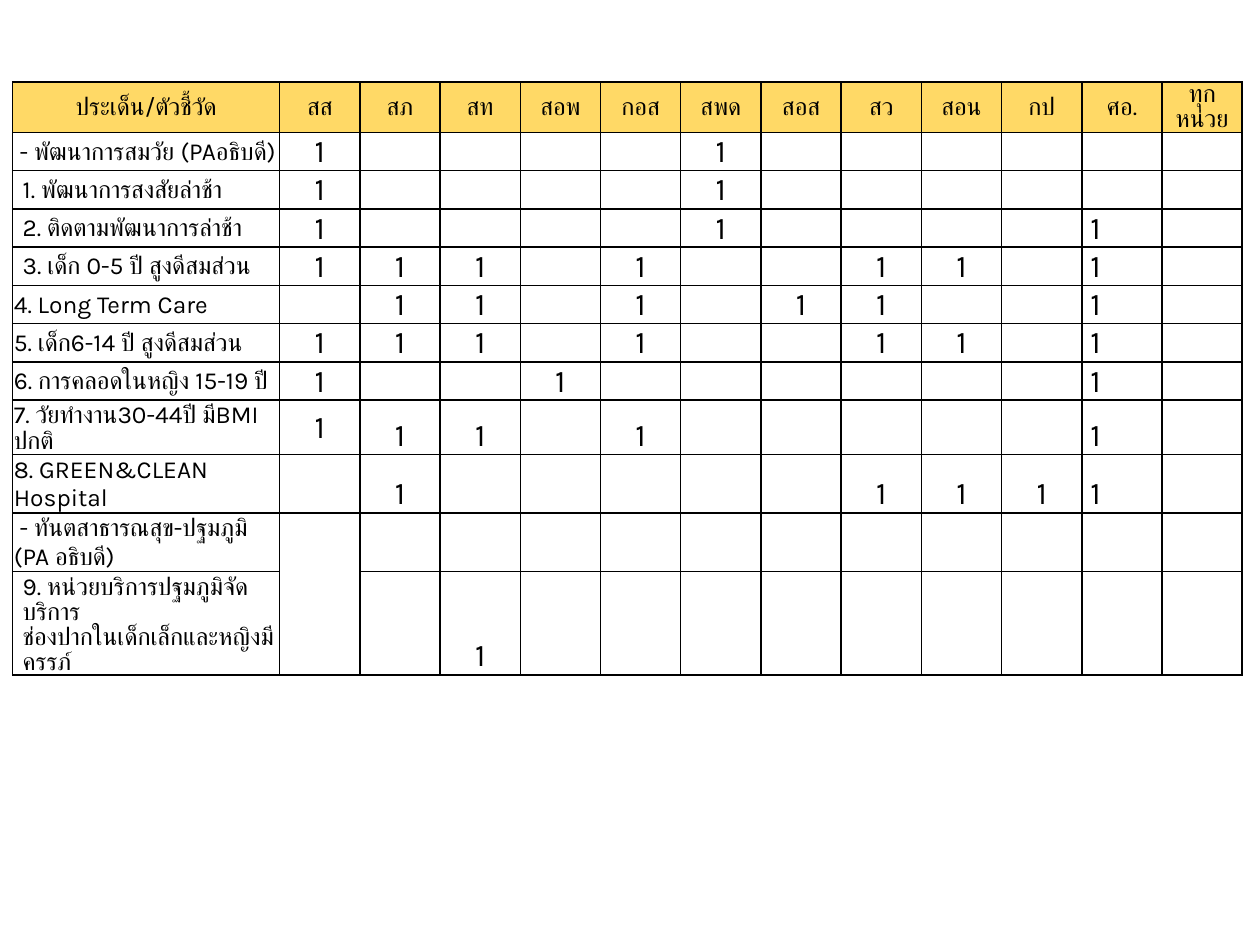
from lxml import etree
from pptx import Presentation
from pptx import util as u
from pptx.dml.color import RGBColor
from pptx.enum import text
from pptx.oxml.ns import qn

BLACK = RGBColor(0x00, 0x00, 0x00)
WHITE = RGBColor(0xFF, 0xFF, 0xFF)
GOLD = RGBColor(0xFF, 0xD9, 0x66)

UNITS = ["สส", "สภ", "สท", "สอพ", "กอส", "สพด", "สอส", "สว", "สอน", "กป", "ศอ.", "ทุกหน่วย"]
LAST_MARKED = UNITS.index("ศอ.") + 1
INDICATORS = [
    (" - พัฒนาการสมวัย (PAอธิบดี)", "สส สพด", 0.01),
    ("1. พัฒนาการสงสัยล่าช้า", "สส สพด", 0.08),
    ("2. ติดตามพัฒนาการล่าช้า", "สส สพด ศอ.", 0.08),
    ("3. เด็ก 0-5 ปี สูงดีสมส่วน", "สส สภ สท กอส สว สอน ศอ.", 0.08),
    ("4. Long Term Care", "สภ สท กอส สอส สว ศอ.", 0.01),
    ("5. เด็ก6-14 ปี สูงดีสมส่วน", "สส สภ สท กอส สว สอน ศอ.", 0.01),
    ("6. การคลอดในหญิง 15-19 ปี", "สส สอพ ศอ.", 0.01),
    ("7. วัยทำงาน30-44ปี มีBMI ปกติ", "สส สภ สท กอส ศอ.", 0.01),
    ("8. GREEN&CLEAN Hospital", "สภ สว สอน กป ศอ.", 0.01),
    (" - ทันตสาธารณสุข-ปฐมภูมิ (PA อธิบดี)", "", 0.01),
    ("9. หน่วยบริการปฐมภูมิจัดบริการ \vช่องปากในเด็กเล็กและหญิงมีครรภ์", "สท", 0.08),
]


class Deck:
    font = "Karla"
    label_size = 14
    mark_size = 18

    def __init__(self, width, height):
        self.prs = Presentation()
        self.prs.slide_width = u.Inches(width)
        self.prs.slide_height = u.Inches(height)
        self.s = self.prs.slides.add_slide(self.prs.slide_layouts[6])

    def across(self, share):
        return round(self.prs.slide_width * share)

    def down(self, share):
        return round(self.prs.slide_height * share)

    def table(self, left, top, widths, heights):
        frame = self.s.shapes.add_table(
            len(heights), len(widths), self.across(left), self.down(top),
            self.across(sum(widths)), self.down(sum(heights)))
        table = frame.table
        table.first_row = table.horz_banding = False
        for column, width in zip(table.columns, widths):
            column.width = self.across(width)
        for row, height in zip(table.rows, heights):
            row.height = self.down(height)
        for cell in table.iter_cells():
            self.cell(cell)
        return table

    def cell(self, cell):
        cell.fill.solid()
        cell.fill.fore_color.rgb = WHITE
        cell.margin_left = cell.margin_right = cell.margin_top = u.Inches(0.01)
        cell.margin_bottom = 0
        cell.text_frame.paragraphs[0].font.size = u.Pt(self.label_size)
        tc_pr = cell._tc.get_or_add_tcPr()
        for i, side in enumerate(("lnL", "lnR", "lnT", "lnB")):
            line = etree.Element(qn(f"a:{side}"), w=str(u.Pt(1)))
            fill = etree.SubElement(line, qn("a:solidFill"))
            etree.SubElement(fill, qn("a:srgbClr"), val=str(BLACK))
            tc_pr.insert(i, line)

    def label(self, cell, words, size, align, anchor=text.MSO_ANCHOR.MIDDLE):
        p = cell.text_frame.paragraphs[0]
        p.text = words
        p.alignment = align
        cell.vertical_anchor = anchor
        for r in p.runs:
            r.font.name = self.font
            r.font.size = u.Pt(size)
            r.font.color.rgb = BLACK

    def header(self, table, words):
        for cell, word in zip(table.rows[0].cells, words):
            cell.fill.fore_color.rgb = GOLD
            self.label(cell, word, self.label_size, text.PP_ALIGN.CENTER)

    def indicator(self, table, row, words, units, indent):
        first = table.cell(row, 0)
        first.margin_left = u.Inches(indent)
        self.label(first, words, self.label_size, text.PP_ALIGN.LEFT)
        for unit in units.split():
            col = UNITS.index(unit) + 1
            last = col == LAST_MARKED
            self.label(
                table.cell(row, col), " 1" if last else "1", self.mark_size,
                text.PP_ALIGN.LEFT if last else text.PP_ALIGN.CENTER,
                text.MSO_ANCHOR.MIDDLE if col == 1 else text.MSO_ANCHOR.BOTTOM)


def main():
    deck = Deck(10, 7.5)
    widths = [0.212] + [0.0637] * len(UNITS)
    heights = [0.24 / 7.5] * 5 + [0.23 / 7.5] * 6 + [0.47 / 7.5]
    table = deck.table(0.01, 0.65 / 7.5, widths, heights)
    deck.header(table, ["ประเด็น/ตัวชี้วัด"] + UNITS)
    for row, indicator in enumerate(INDICATORS, 1):
        deck.indicator(table, row, *indicator)
    table.cell(10, 1).merge(table.cell(11, 1))
    deck.prs.save("out.pptx")


if __name__ == "__main__":
    main()
